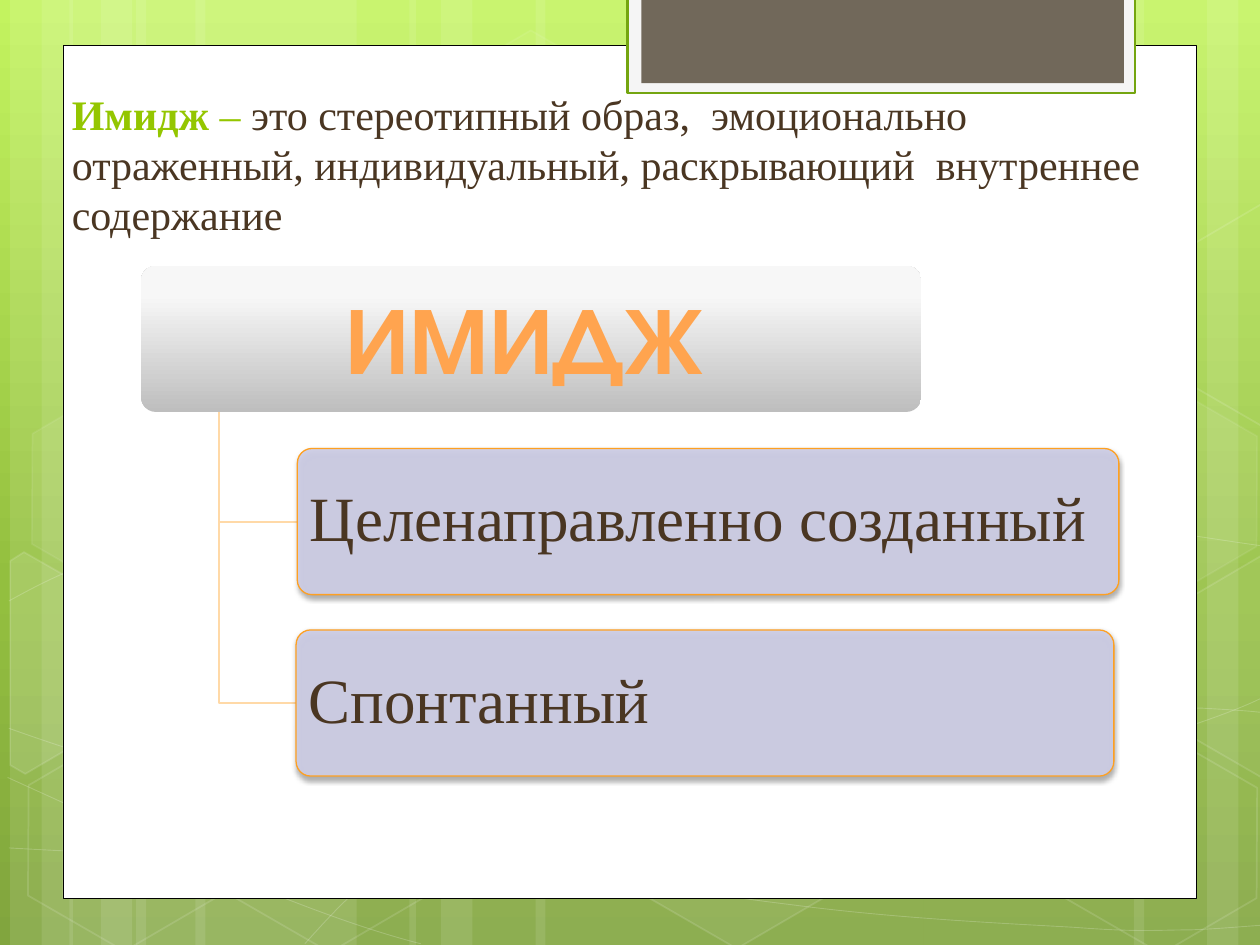
import math

from pptx import Presentation
from pptx import util as u
from pptx.dml.color import RGBColor
from pptx.enum import shapes, text
from pptx.oxml.ns import qn
from lxml import etree

COLUMNS, ROWS = 10, 7.5
CELL = u.Inches(1)
SERIF, SANS = "Times New Roman", "TeX Gyre Adventor"
COLORS = {
    "white": "FFFFFF", "black": "000000", "tab": "F5F5F5", "tab_edge": "74A510",
    "taupe": "71685A", "green": "94C600", "brown": "4A3622", "orange": "FFA44F",
    "lilac": "CDCDE6", "edge": "FEA022", "branch": "FFD9A7",
}
BACKDROP = [(0, "C3F35F"), (62, "93BF3F"), (100, "81A53E")]
SILVER = [(0, "BEBEBE"), (80, "F7F7F7"), (100, "F8F8F8")]

# left, width of the full-height stripes
STRIPES = [(1.08, 1.75), (0.08, 0.5), (0.33, 0.83), (1.55, 1.75), (0.55, 0.5),
           (0.8, 0.83), (7.33, 1.75), (9.58, 0.5), (9, 0.83), (4.25, 3.08),
           (3.25, 0.5), (3.5, 0.83)]
# start point, then two control points and an end point per Bezier segment
CURVES = [
    [(0.07, 6.73), (0.61, 6.76), (1.15, 6.79), (1.9, 6.78), (2.65, 6.77), (3.58, 6.75),
     (4.58, 6.65), (5.58, 6.55), (7, 6.36), (7.92, 6.17), (8.83, 5.98), (9.77, 5.68),
     (10.07, 5.51)],
    [(0.07, 4.77), (0.36, 4.61), (0.65, 4.46), (1.21, 4.31), (1.78, 4.16), (2.59, 3.94),
     (3.47, 3.87), (4.36, 3.8), (5.44, 3.79), (6.54, 3.87), (7.64, 3.95), (9.47, 4.26),
     (10.07, 4.34)],
    [(0.06, 6.17), (1.27, 6.72), (2.47, 7.27), (3.34, 7.49)],
    [(0.07, 5.78), (0.38, 5.89), (0.7, 6), (1.28, 6.16), (1.86, 6.31), (2.73, 6.56),
     (3.57, 6.73), (4.4, 6.9), (5.45, 7.08), (6.28, 7.18), (7.11, 7.29), (8, 7.33),
     (8.53, 7.36), (9.05, 7.4), (9.19, 7.38), (9.45, 7.38), (9.71, 7.37), (9.89, 7.35),
     (10.07, 7.34)],
    [(2.42, 7.49), (2.6, 7.29), (2.78, 7.09), (3.02, 6.91), (3.26, 6.73), (3.6, 6.53),
     (3.88, 6.39), (4.16, 6.25), (4.33, 6.19), (4.7, 6.09), (5.06, 5.99), (5.73, 5.85),
     (6.08, 5.78), (6.44, 5.71), (6.49, 5.71), (6.8, 5.69), (7.11, 5.66), (7.6, 5.63),
     (7.94, 5.62), (8.29, 5.61), (8.86, 5.62), (8.86, 5.62), (9.08, 5.62), (9.31, 5.62),
     (9.53, 5.62), (9.71, 5.63), (9.88, 5.64), (9.97, 5.65), (10.06, 5.66), (10.03, 5.65),
     (10.06, 5.66)],
]
# left, top, fill opacity, line opacity
HEXAGONS = [(3.34, 0.36, 4, 8), (4.97, 5.89, 6, 12), (0.11, 5.91, 0, 12),
            (0.14, 3.12, 7, 8), (1.74, 5.92, 0, 12), (7.53, 4.53, 10, 12),
            (8.34, 5.93, 0, 12), (8.34, 3.14, 7, 8)]
TILT = 30
LEFT_CUT = [(0.08, 4.45), (0.19, 4.38), (0.96, 4.82), (0.95, 5.7), (0.2, 6.14), (0.08, 6.07)]
RIGHT_CUT = [(9.26, 4.85), (10.01, 4.41), (10.09, 4.46), (10.09, 6.13), (10.02, 6.17),
             (9.26, 5.73)]
HEXAGON_ROW = 2.79


def cells(*counts):
    return [round(count * CELL) for count in counts]


def set_color(fill, owner, name, opacity=100):
    """Solid colour; owner is the XML element that holds the fill."""
    fill.solid()
    fill.fore_color.rgb = RGBColor.from_string(COLORS[name])
    if opacity < 100:
        color = next(owner.iter(qn("a:srgbClr")))
        etree.SubElement(color, qn("a:alpha"), val=str(opacity * 1000))


def set_gradient(fill, owner, stops, angle):
    fill.gradient()
    fill.gradient_angle = angle
    stop_list = next(owner.iter(qn("a:gsLst")))
    for stop in list(stop_list):
        stop_list.remove(stop)
    for position, color in stops:
        stop = etree.SubElement(stop_list, qn("a:gs"), pos=str(position * 1000))
        etree.SubElement(stop, qn("a:srgbClr"), val=color)


def style(shape, fill=None, opacity=100, line=None, width=1, line_opacity=100):
    shape.shadow.inherit = False
    if line:
        shape.line.width = u.Pt(width)
        set_color(shape.line.fill, shape.element.spPr.find(qn("a:ln")), line, line_opacity)
    else:
        shape.line.fill.background()
    if fill and opacity:
        set_color(shape.fill, shape.element.spPr, fill, opacity)
    else:
        shape.fill.background()
    return shape


def add_block(page, at, kind=shapes.MSO_SHAPE.RECTANGLE, adjust=(), **look):
    shape = page.shapes.add_shape(kind, *cells(*at))
    for index, value in enumerate(adjust):
        shape.adjustments[index] = value
    return style(shape, **look)


def add_outline(page, points, close=False, **look):
    corners = [cells(*point) for point in points]
    builder = page.shapes.build_freeform(*corners[0], scale=1.0)
    builder.add_line_segments(corners[1:], close=close)
    return style(builder.convert_to_shape(), **look)


def add_curve(page, knots, **look):
    """Outline whose every three points make one Bezier segment."""
    shape = add_outline(page, knots, **look)
    steps = list(shape.element.iter(qn("a:lnTo")))
    for first in range(0, len(steps), 3):
        curve = etree.Element(qn("a:cubicBezTo"))
        steps[first].addprevious(curve)
        for step in steps[first:first + 3]:
            curve.append(step[0])
            step.getparent().remove(step)


def add_tilted(page, points, center, **look):
    """Closed outline drawn upright around center, then turned to its place."""
    cos, sin = math.cos(math.radians(TILT)), math.sin(math.radians(TILT))
    cx, cy = center
    upright = [(cx + (x - cx) * cos + (y - cy) * sin, cy - (x - cx) * sin + (y - cy) * cos)
               for x, y in points]
    add_outline(page, upright, close=True, **look).rotation = TILT


def add_shadow(shape):
    effects = shape.element.spPr.find(qn("a:effectLst"))
    shadow = etree.SubElement(effects, qn("a:outerShdw"), blurRad=str(u.Pt(3.1)),
                              dist=str(u.Pt(1.8)), dir="5400000", rotWithShape="0")
    color = etree.SubElement(shadow, qn("a:srgbClr"), val=COLORS["black"])
    etree.SubElement(color, qn("a:alpha"), val="35000")


def write(box, *spans, size, font=SERIF, align=text.PP_ALIGN.LEFT,
          anchor=text.MSO_ANCHOR.MIDDLE, wrap=True, spacing=1.0, side=0.1):
    """Fill a box with one paragraph; each span is words, colour, bold."""
    frame = box.text_frame
    frame.auto_size = text.MSO_AUTO_SIZE.NONE
    frame.word_wrap = wrap
    frame.vertical_anchor = anchor
    frame.margin_left = frame.margin_right = u.Inches(side)
    para = frame.paragraphs[0]
    para.alignment, para.line_spacing = align, spacing
    for words, color, bold in spans:
        span = para.add_run()
        span.text = words
        span.font.name, span.font.size, span.font.bold = font, u.Pt(size), bold
        span.font.color.rgb = RGBColor.from_string(COLORS[color])


def add_backdrop(page):
    set_gradient(page.background.fill, page.element, BACKDROP, 270)
    for left, width in STRIPES:
        add_block(page, (left, 0, width, ROWS), fill="white", opacity=10)
    for knots in CURVES:
        add_curve(page, knots, line="white", width=0.5, line_opacity=20)
    for left, top, opacity, line_opacity in HEXAGONS:
        hexagon = add_block(page, (left, top, 1.75, 1.52), shapes.MSO_SHAPE.HEXAGON,
                            (0.285, 1.155), fill="white", opacity=opacity,
                            line="white", line_opacity=line_opacity)
        hexagon.rotation = TILT
    upper_cut = [(x, y - HEXAGON_ROW) for x, y in RIGHT_CUT]
    for points, center, opacity in ((LEFT_CUT, (0.36, 5.35), 10),
                                    (RIGHT_CUT, (9.85, 5.2), 4),
                                    (upper_cut, (9.85, 5.2 - HEXAGON_ROW), 0)):
        add_tilted(page, points, center, fill="white", opacity=opacity,
                   line="white", line_opacity=12)


def add_panel(page):
    add_block(page, (0.5, 0.36, 9, 6.77), fill="white", line="black", width=0.5)
    add_block(page, (4.98, -0.02, 4.03, 0.76), fill="tab", line="tab_edge", width=1.25)
    add_block(page, (5.09, -0.02, 3.83, 0.68), fill="taupe")


def add_definition(page):
    title = page.shapes.title
    title.left, title.top, title.width, title.height = cells(0.47, 0.23, 8.83, 1.72)
    title.element.getparent().append(title.element)  # in front of the panel
    write(title, ("Имидж ", "green", True), ("– ", "green", False),
          ("это стереотипный образ,  эмоционально отраженный, индивидуальный, "
           "раскрывающий  внутреннее содержание", "brown", False),
          size=24, anchor=text.MSO_ANCHOR.BOTTOM)


def add_hierarchy(page):
    rounded, height, trunk, inset = shapes.MSO_SHAPE.ROUNDED_RECTANGLE, 1.16, 1.74, 0.03
    root_top = 2.11
    root = add_block(page, (1.12, root_top, 6.19, height), rounded, (0.1,))
    set_gradient(root.fill, root.element.spPr, SILVER, 90)
    for words, left, top, width in (("Целенаправленно созданный", 2.36, 3.56, 6.52),
                                    ("Спонтанный", 2.35, 5, 6.49)):
        middle = top + height / 2
        add_outline(page, [(trunk, root_top + height), (trunk, middle), (left, middle)],
                    line="branch", width=1.25)
        child = add_block(page, (left, top, width, height), rounded, (0.1,),
                          fill="lilac", opacity=90, line="edge", width=0.75)
        add_shadow(child)
        label = page.shapes.add_textbox(*cells(left + inset, top + inset,
                                               width - 2 * inset, height - 2 * inset))
        write(label, (words, "brown", False), size=36, spacing=0.9, side=0.07)
    heading = page.shapes.add_textbox(*cells(2.56, 2.17, 3.22, 1.01))
    write(heading, ("ИМИДЖ", "orange", True), size=54, font=SANS, wrap=False,
          align=text.PP_ALIGN.CENTER, anchor=text.MSO_ANCHOR.TOP)


def main():
    deck = Presentation()
    deck.slide_width, deck.slide_height = cells(COLUMNS, ROWS)
    page = deck.slides.add_slide(deck.slide_layouts[5])
    add_backdrop(page)
    add_panel(page)
    add_definition(page)
    add_hierarchy(page)
    deck.save("out.pptx")


if __name__ == "__main__":
    main()
